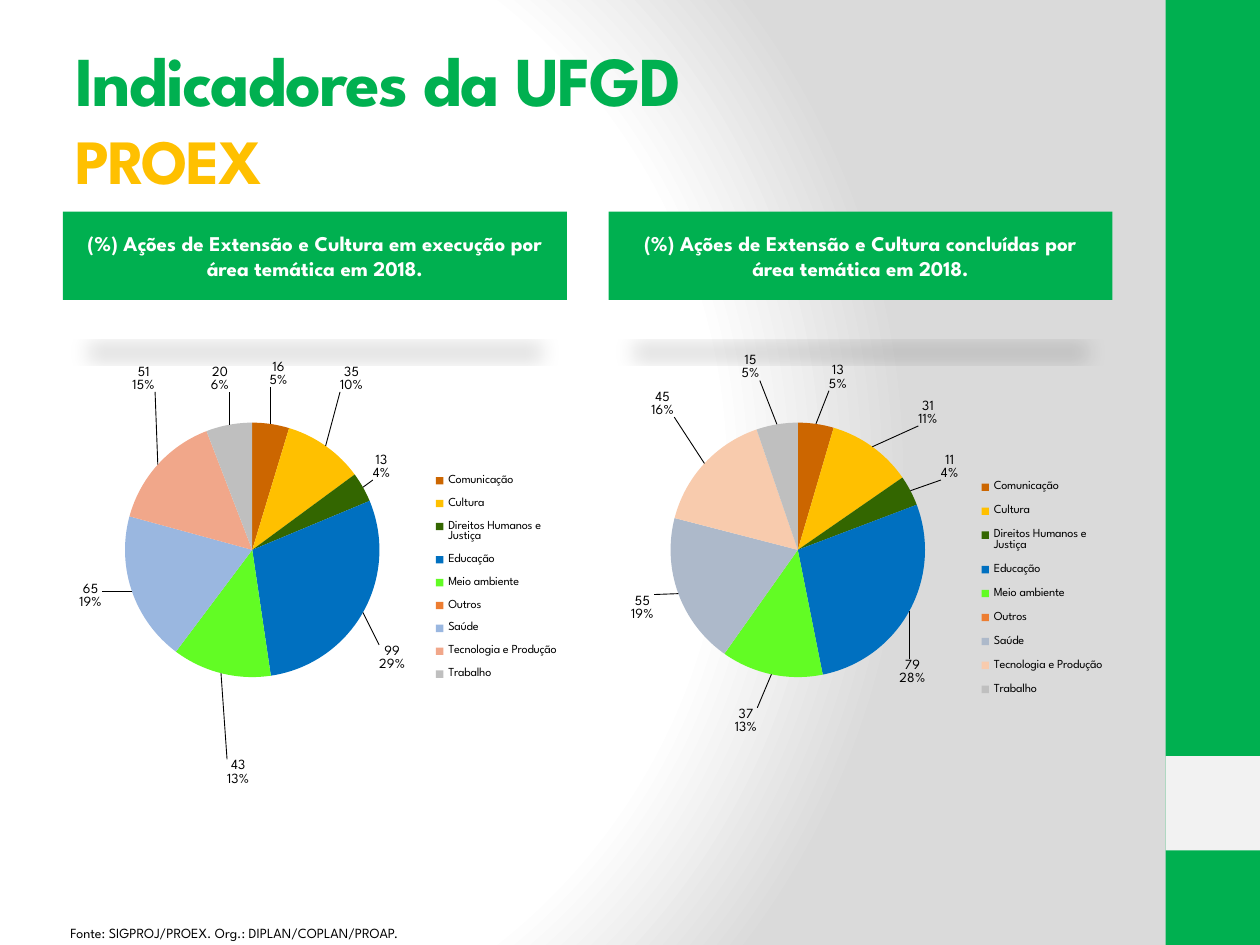
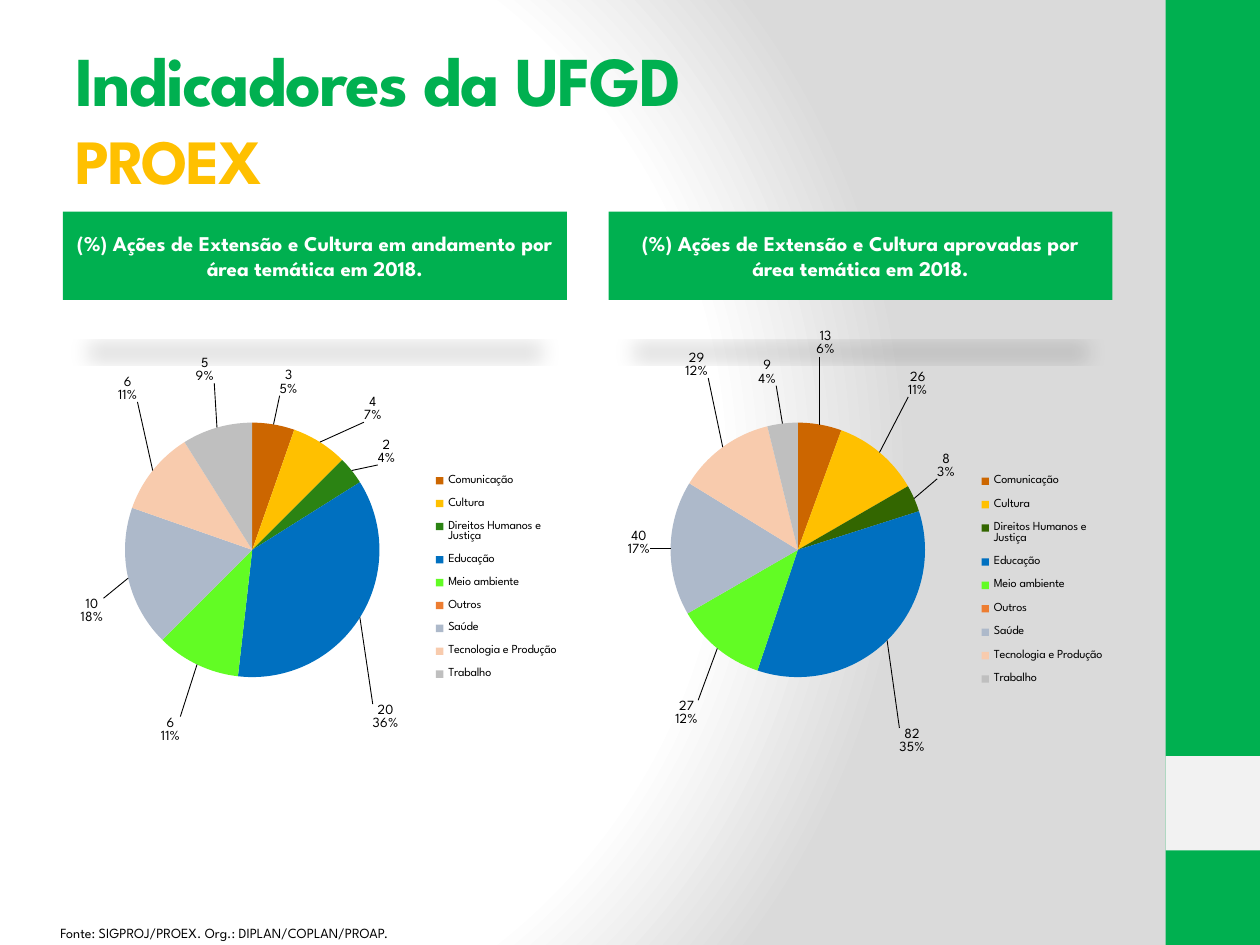
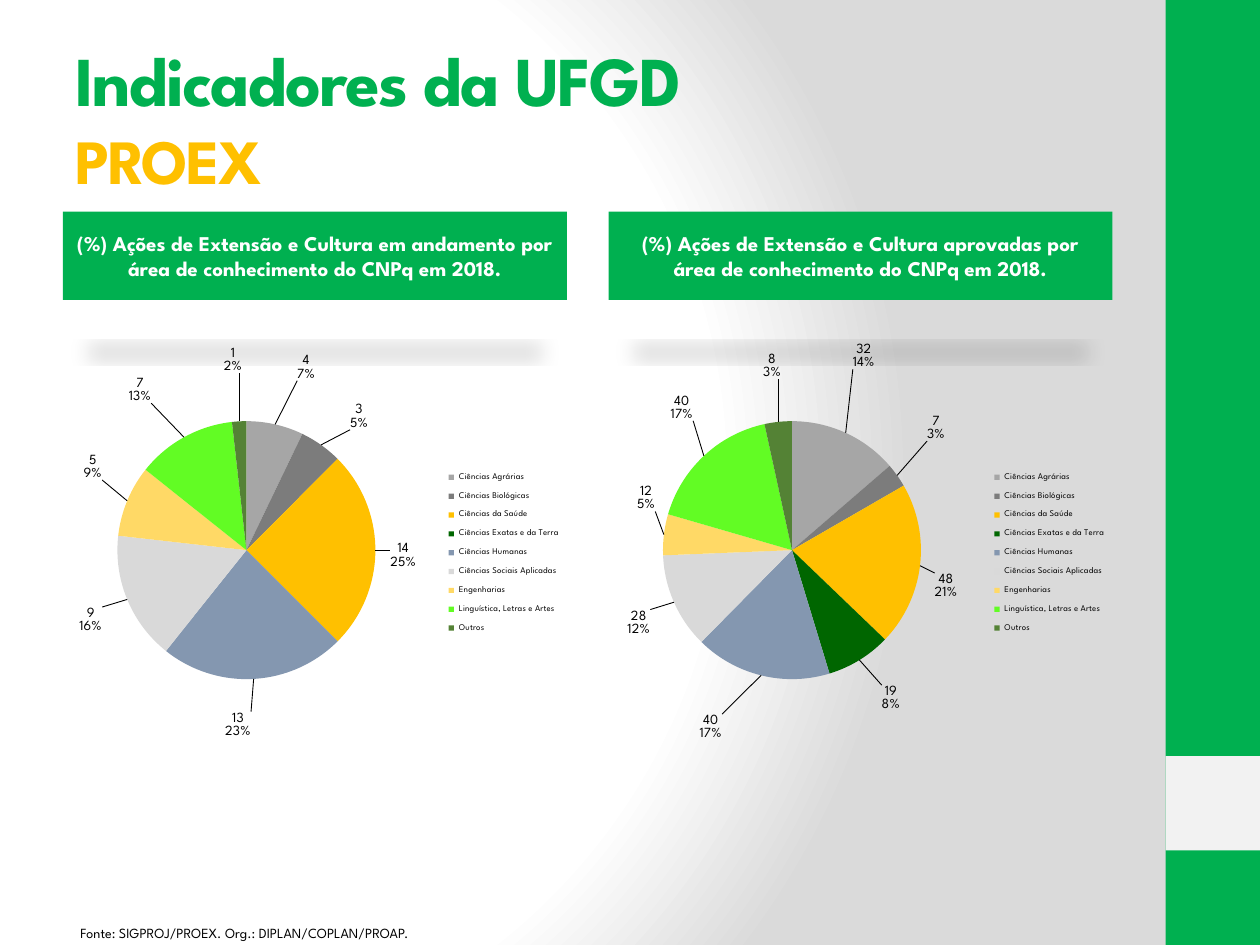
import math
from collections import namedtuple
from pptx import Presentation
from pptx import util as u
from pptx.chart.data import CategoryChartData
from pptx.dml.color import RGBColor
from pptx.enum import chart as ch, shapes, text
from pptx.oxml import parse_xml
from pptx.oxml.ns import nsdecls, qn

FONT = "League Spartan"
GREEN, GOLD, PALE, WHITE, BLACK = "00B050", "FFC000", "F2F2F2", "FFFFFF", "000000"
WIDE, HIGH = 10, 7.5
LEFT, COL, STEP = 0.5, 4, 4.33
BAND_TOP, BAND_H, PIE_H = 1.68, 0.7, 4.32
SOURCE = "Fonte: SIGPROJ/PROEX. Org.: DIPLAN/COPLAN/PROAP."

THEMES = ["Comunicação", "Cultura", "Direitos Humanos e Justiça", "Educação",
          "Meio ambiente", "Outros", "Saúde", "Tecnologia e Produção", "Trabalho"]
FIELDS = ["Ciências Agrárias", "Ciências Biológicas", "Ciências da Saúde",
          "Ciências Exatas e da Terra", "Ciências Humanas",
          "Ciências Sociais Aplicadas", "Engenharias",
          "Linguística, Letras e Artes", "Outros"]
FIELD_HUES = ["A6A6A6", "7C7C7C", "FFC000", "006600", "8497B0",
              "D9D9D9", "FFD966", "62FC24", "548235"]

# Areas are shares of the chart: left, top, width, height
Kind = namedtuple("Kind", "cats plot size")
THEME = Kind(THEMES, (0.123, 0.101, 0.505, 0.717), 7)
FIELD = Kind(FIELDS, (0.108, 0.097, 0.512, 0.726), 5)
# Spots are label centres, in inches from the chart's corner
Pie = namedtuple("Pie", "head kind vals hues key spots")


def theme_hues(law="336600", health="ADB9CA", tech="F8CBAD"):
    return ["CC6600", "FFC000", law, "0070C0", "62FC24", "ED7D31",
            health, tech, "BFBFBF"]


def head(state, area="temática"):
    return f"(%) Ações de Extensão e Cultura {state} por área {area} em 2018."


CNPQ = "de conhecimento do CNPq"
FIELD_KEY = (0.75, 0.3, 0.25, 0.33)
PAGES = [
    (0.46, [
        Pie(head("em execução"), THEME, [16, 35, 13, 99, 43, 0, 65, 51, 20],
            theme_hues(health="9AB7E0", tech="F1A78A"), (0.73, 0.3, 0.26, 0.42),
            [(1.74, 0.59), (2.3, 0.63), (2.56, 1.33), (2.61, 2.84), (1.38, 3.75),
             None, (0.21, 2.35), (0.63, 0.63), (1.22, 0.63)]),
        Pie(head("concluídas"), THEME, [13, 31, 11, 79, 37, 0, 55, 45, 15],
            theme_hues(), (0.73, 0.31, 0.26, 0.44),
            [(1.85, 0.62), (2.56, 0.9), (2.74, 1.33), (2.41, 2.95), (1.08, 3.34),
             None, (0.26, 2.44), (0.42, 0.83), (1.1, 0.54)])]),
    (0.38, [
        Pie(head("em andamento"), THEME, [3, 4, 2, 20, 6, 0, 10, 6, 5],
            theme_hues(law="2B8313"), (0.73, 0.3, 0.26, 0.42),
            [(1.82, 0.66), (2.49, 0.87), (2.6, 1.21), (2.56, 3.31), (0.83, 3.41),
             None, (0.22, 2.47), (0.49, 0.71), (1.1, 0.56)]),
        Pie(head("aprovadas"), THEME, [13, 26, 8, 82, 27, 0, 40, 29, 9],
            theme_hues(), (0.73, 0.3, 0.26, 0.43),
            [(1.75, 0.35), (2.48, 0.67), (2.71, 1.32), (2.41, 3.5), (0.61, 3.28),
             None, (0.23, 1.93), (0.69, 0.52), (1.23, 0.58)])]),
    (0.54, [
        Pie(head("em andamento", CNPQ), FIELD, [4, 3, 14, 0, 13, 9, 5, 7, 1],
            FIELD_HUES, FIELD_KEY,
            [(1.96, 0.54), (2.38, 0.93), (2.7, 2.03), None, (1.39, 3.37),
             (0.21, 2.54), (0.21, 1.33), (0.6, 0.72), (1.35, 0.48)]),
        Pie(head("aprovadas", CNPQ), FIELD, [32, 7, 48, 19, 40, 28, 12, 40, 8],
            FIELD_HUES, FIELD_KEY,
            [(2.04, 0.45), (2.63, 1.02), (2.69, 2.27), (2.27, 3.16), (0.8, 3.39),
             (0.23, 2.56), (0.27, 1.58), (0.57, 0.86), (1.27, 0.53)])]),
]


def rgb(hue):
    return RGBColor.from_string(hue)


def inches(box):
    return [u.Inches(n) for n in box]


def style(font, size, hue, bold=False):
    font.name, font.size, font.bold = FONT, u.Pt(size), bold
    font.color.rgb = rgb(hue)


def add_run(para, words, size, hue, bold=False):
    run = para.add_run()
    run.text = words
    style(run.font, size, hue, bold)
    return run


def add_rect(slide, box, hue):
    rect = slide.shapes.add_shape(shapes.MSO_SHAPE.RECTANGLE, *inches(box))
    rect.shadow.inherit = False
    rect.fill.solid()
    rect.fill.fore_color.rgb = rgb(hue)
    rect.line.fill.background()
    return rect


def dress(layout, slide):
    """Give the layout its glow and its side stripe, which is drawn on slide first."""
    layout.background.fill.solid()
    stops = "".join(f'<a:gs pos="{pos}000"><a:srgbClr val="{hue}"/></a:gs>'
                    for pos, hue in ((0, WHITE), (75, WHITE), (100, "DADADA")))
    glow = parse_xml(
        f'<a:gradFill {nsdecls("a")} rotWithShape="1"><a:gsLst>{stops}</a:gsLst>'
        '<a:path path="circle"><a:fillToRect l="20000" t="50000" r="100000" '
        'b="50000"/></a:path></a:gradFill>')
    flat = layout.element.find(".//" + qn("a:solidFill"))
    flat.getparent().replace(flat, glow)
    stripe = 0.75
    for top, tall, hue in ((0, HIGH, GREEN), (HIGH - 2 * stripe, stripe, PALE)):
        part = add_rect(slide, (WIDE - stripe, top, stripe, tall), hue)
        layout.shapes.element.append(part.element)


def add_title(slide, box):
    title = slide.shapes.title
    title.left, title.top, title.width, title.height = inches(box)
    frame = title.text_frame
    frame.auto_size = text.MSO_AUTO_SIZE.NONE
    frame.vertical_anchor = text.MSO_ANCHOR.MIDDLE
    frame.margin_top = u.Inches(0.11)
    para = frame.paragraphs[0]
    para.alignment = text.PP_ALIGN.LEFT
    para.line_spacing = u.Pt(44)
    runs = [add_run(para, "Indicadores da UFGD", 40, GREEN, True)]
    para.add_line_break()
    runs.append(add_run(para, "PROEX", 36, GOLD, True))
    for run in runs:
        run.font._element.set("spc", "-100")


def add_band(slide, box, words):
    band = add_rect(slide, box, GREEN)
    props = band.element.spPr
    props.find(qn("a:effectLst")).append(parse_xml(
        f'<a:outerShdw {nsdecls("a")} blurRad="152400" dist="317500" dir="5400000" '
        'sx="90000" sy="-19000" rotWithShape="0"><a:srgbClr val="000000">'
        '<a:alpha val="15000"/></a:srgbClr></a:outerShdw>'))
    frame = band.text_frame
    frame.word_wrap = True
    frame.vertical_anchor = text.MSO_ANCHOR.MIDDLE
    para = frame.paragraphs[0]
    para.alignment = text.PP_ALIGN.CENTER
    para.line_spacing = u.Pt(14.3)
    add_run(para, words, 12, WHITE, True)


def layout_xml(inner):
    return (f'<c:layout {nsdecls("c")}><c:manualLayout>{inner}'
            '</c:manualLayout></c:layout>')


def set_area(parent, place, area, inner=False):
    """Fix a chart part to an area, as child number place of parent."""
    for old in parent.findall(qn("c:layout")):
        parent.remove(old)
    tags = '<c:layoutTarget val="inner"/>' if inner else ""
    tags += '<c:xMode val="edge"/><c:yMode val="edge"/>'
    tags += "".join(f'<c:{tag} val="{num}"/>' for tag, num in zip("xywh", area))
    parent.insert(place, parse_xml(layout_xml(tags)))


def shifts(pie, wide, high):
    """Yield each label's move from its usual place beside its slice."""
    left, top, w, h = pie.kind.plot
    mid = (left + w / 2) * wide, (top + h / 2) * high
    reach = min(w * wide, h * high) / 2 + 0.06
    half, total, done = 0.1, sum(pie.vals), 0
    for val, spot in zip(pie.vals, pie.spots):
        turn = 2 * math.pi * (done + val / 2) / total
        done += val
        if spot is None:
            yield None
            continue
        moves = []
        for at, goal, way in zip(mid, spot, (math.sin(turn), -math.cos(turn))):
            side = 0 if abs(way) < 0.09 else math.copysign(half, way)
            moves.append(goal - at - reach * way - side)
        yield moves[0] / wide, moves[1] / high


def add_labels(series, pie, wide, high):
    flags = "".join(f'<c:show{name} val="{on}"/>' for name, on in (
        ("LegendKey", 0), ("Val", 1), ("CatName", 0), ("SerName", 0),
        ("Percent", 1), ("BubbleSize", 0)))
    show = f'<c:dLblPos val="bestFit"/>{flags}<c:separator>\n</c:separator>'
    labels = ""
    for i, move in enumerate(shifts(pie, wide, high)):
        place = ""
        if move:
            place = layout_xml(f'<c:x val="{move[0]:.4f}"/><c:y val="{move[1]:.4f}"/>')
        labels += f'<c:dLbl><c:idx val="{i}"/>{place}{show}</c:dLbl>'
    series.find(qn("c:cat")).addprevious(parse_xml(
        f'<c:dLbls {nsdecls("c", "a")}>{labels}{show}<c:showLeaderLines val="1"/>'
        '<c:leaderLines><c:spPr><a:ln w="6350"><a:solidFill><a:srgbClr val="000000"/>'
        '</a:solidFill></a:ln></c:spPr></c:leaderLines></c:dLbls>'))


def add_pie(slide, box, pie):
    data = CategoryChartData()
    data.categories = pie.kind.cats
    data.add_series("Series 1", pie.vals)
    chart = slide.shapes.add_chart(ch.XL_CHART_TYPE.PIE, *inches(box), data).chart
    chart.has_title = False
    style(chart.font, 8, BLACK)
    plot = chart.plots[0]
    plot.vary_by_categories = True
    for i, hue in enumerate(pie.hues):
        fill = plot.series[0].points[i].format.fill
        fill.solid()
        fill.fore_color.rgb = rgb(hue)
    chart.has_legend = True
    key = chart.legend
    key.position = ch.XL_LEGEND_POSITION.RIGHT
    key.include_in_layout = False
    style(key.font, pie.kind.size, BLACK)
    root = chart.element
    set_area(root.find(".//" + qn("c:legend")), 1, pie.key)
    set_area(root.find(".//" + qn("c:plotArea")), 0, pie.kind.plot, True)
    add_labels(root.find(".//" + qn("c:ser")), pie, *box[2:])


def add_source(slide, box):
    frame = slide.shapes.add_textbox(*inches(box)).text_frame
    frame.word_wrap = True
    add_run(frame.paragraphs[0], SOURCE, 8, BLACK)


def add_page(prs, layout, note, pies):
    slide = prs.slides.add_slide(layout)
    add_title(slide, (LEFT, 0.3, STEP + COL, 1.25))
    for i, pie in enumerate(pies):
        left = LEFT + i * STEP
        add_band(slide, (left, BAND_TOP, COL, BAND_H), pie.head)
        add_pie(slide, (left, BAND_TOP + BAND_H, COL, PIE_H), pie)
    add_source(slide, (note, 7.29, 3.39, 0.23))


def main():
    prs = Presentation()
    prs.slide_width, prs.slide_height = inches((WIDE, HIGH))
    layout = prs.slide_layouts[5]
    for note, pies in PAGES:
        add_page(prs, layout, note, pies)
    dress(layout, prs.slides[0])
    prs.save("out.pptx")


if __name__ == "__main__":
    main()
